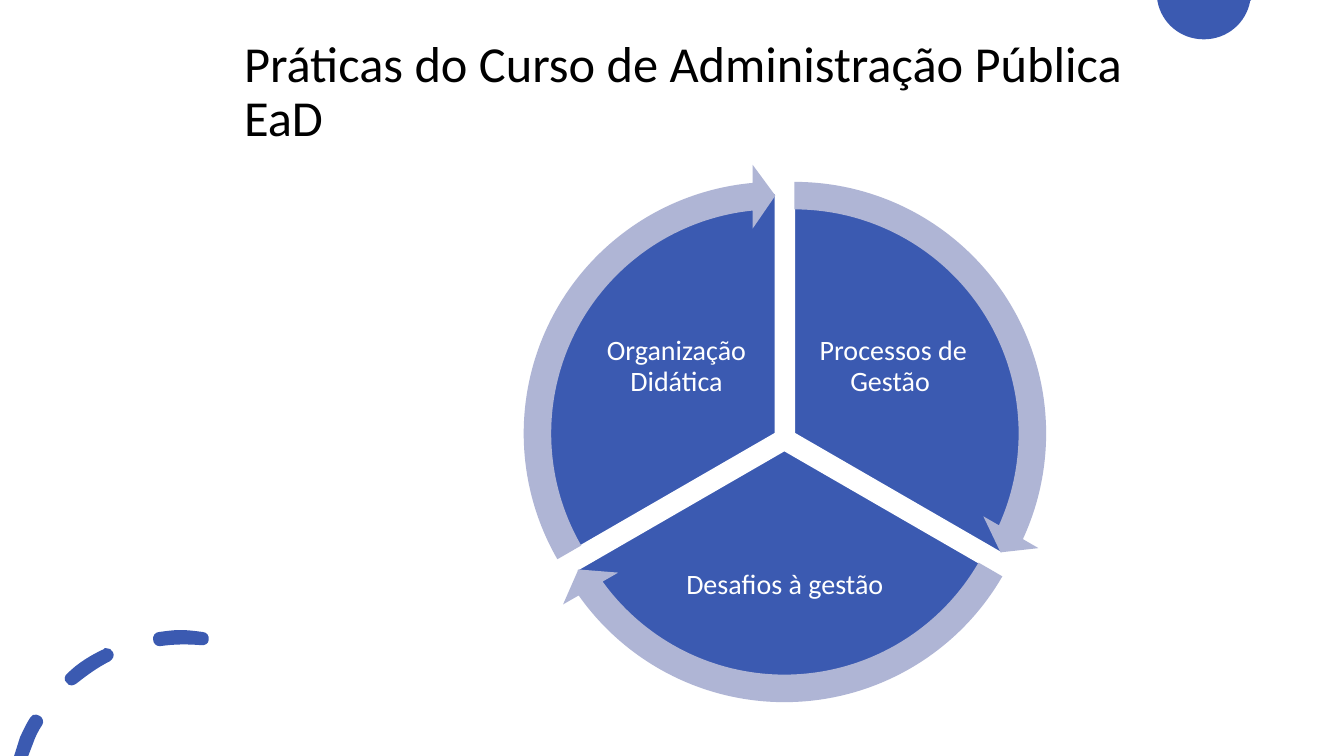
from dataclasses import dataclass

from lxml.etree import SubElement
from pptx import Presentation
from pptx.dml.color import RGBColor
from pptx.enum.shapes import MSO_SHAPE as Kind
from pptx.enum.text import MSO_ANCHOR as Anchor, MSO_AUTO_SIZE as Fit, PP_ALIGN as Align
from pptx.oxml.ns import qn
from pptx.shapes.autoshape import Shape
from pptx.shapes.shapetree import GroupShapes, SlideShapes
from pptx.slide import Slide
from pptx.text.text import TextFrame
from pptx.util import Inches, Pt

Point = tuple[float, float]
Part = tuple[Point, ...]
Outline = tuple[Part, ...]


@dataclass(frozen=True)
class Theme:
    font: str = "Calibri"
    blue: RGBColor = RGBColor(0x3B, 0x5A, 0xB1)
    pale: RGBColor = RGBColor(0xAF, 0xB5, 0xD5)
    white: RGBColor = RGBColor(0xFF, 0xFF, 0xFF)
    black: RGBColor = RGBColor(0, 0, 0)
    title: int = 36
    label: int = 20


@dataclass(frozen=True)
class Box:
    left: float
    top: float
    width: float
    height: float

    def emu(self) -> tuple[int, int, int, int]:
        return (Inches(self.left), Inches(self.top),
                Inches(self.width), Inches(self.height))


@dataclass(frozen=True)
class Sector:
    """One third of the cycle; angles are in the units of the preset shapes."""
    text: str
    mid: Point
    start: float
    end: float
    label: Box


THEME = Theme()
PIE, RING = 4.76, 5.35
BAND, HEAD, TIP = 0.051, 3.275, 0.059

SECTORS = (
    Sector("Processos de Gestão ", (7.88, 4.3), 162, 18, Box(8.01, 2.93, 1.7, 1.42)),
    Sector("Desafios à gestão ", (7.78, 4.47), 18, 90, Box(6.54, 5.18, 2.55, 1.25)),
    Sector("Organização Didática", (7.69, 4.3), 90, 162, Box(5.86, 2.93, 1.7, 1.42)),
)

# Each outline is a start point, then lines (one point) or Bezier curves (three).
DISC: Outline = (
    ((11.48, 0),), ((12.41, 0),), ((12.4, 0.01),),
    ((12.36, 0.23), (12.17, 0.39), (11.94, 0.39)),
    ((11.71, 0.39), (11.52, 0.23), (11.48, 0.01)),
)
LOW: Outline = (
    ((0.36, 7.09),), ((0.34, 7.08), (0.31, 7.1), (0.3, 7.12)),
    ((0.26, 7.18), (0.23, 7.25), (0.2, 7.31)),
    ((0.14, 7.5),), ((0.28, 7.5),), ((0.33, 7.37),),
    ((0.35, 7.31), (0.38, 7.25), (0.42, 7.19)),
    ((0.44, 7.16), (0.42, 7.11), (0.39, 7.1)),
    ((0.38, 7.09), (0.37, 7.09), (0.36, 7.09)),
)
MIDDLE: Outline = (
    ((1.05, 6.43),), ((1.04, 6.43), (1.03, 6.43), (1.03, 6.44)),
    ((0.9, 6.5), (0.77, 6.58), (0.67, 6.68)),
    ((0.64, 6.7), (0.63, 6.75), (0.66, 6.77)),
    ((0.67, 6.79), (0.69, 6.8), (0.71, 6.8)), ((0.71, 6.8),),
    ((0.73, 6.8), (0.74, 6.79), (0.76, 6.78)),
    ((0.86, 6.7), (0.97, 6.62), (1.09, 6.56)),
    ((1.12, 6.54), (1.14, 6.5), (1.12, 6.47)),
    ((1.11, 6.44), (1.08, 6.43), (1.05, 6.43)),
)
HIGH: Outline = (
    ((1.79, 6.25),), ((1.72, 6.25), (1.65, 6.26), (1.58, 6.27)),
    ((1.54, 6.27), (1.51, 6.31), (1.52, 6.35)),
    ((1.52, 6.38), (1.55, 6.41), (1.58, 6.41)),
    ((1.59, 6.41), (1.59, 6.41), (1.59, 6.41)),
    ((1.73, 6.39), (1.86, 6.39), (1.99, 6.4)),
    ((2.03, 6.41), (2.07, 6.38), (2.07, 6.35)),
    ((2.08, 6.31), (2.05, 6.27), (2.01, 6.27)),
    ((2.01, 6.27), (2.01, 6.27), (2.01, 6.27)),
    ((1.94, 6.26), (1.86, 6.25), (1.79, 6.25)),
)


def paint(shape: Shape, color: RGBColor) -> None:
    shape.shadow.inherit = False
    shape.fill.solid()
    shape.fill.fore_color.rgb = color
    shape.line.fill.background()


def bend(shape: Shape, parts: list[Part]) -> None:
    """Turn the line segments that have control points into Bezier curves."""
    lines = list(shape.element.iter(qn("a:lnTo")))
    for line, part in zip(lines, parts):
        if len(part) == 3:
            curve = line.makeelement(qn("a:cubicBezTo"))
            for x, y in part:
                SubElement(curve, qn("a:pt"), x=str(Inches(x) - shape.left),
                           y=str(Inches(y) - shape.top))
            line.getparent().replace(line, curve)


def add_blob(shapes: SlideShapes, *outlines: Outline) -> None:
    """Draw one freeform with a closed contour for each outline."""
    pen = None
    for outline in outlines:
        first, *ends = [(Inches(x), Inches(y)) for *_, (x, y) in outline]
        if pen is None:
            pen = shapes.build_freeform(*first, scale=1.0)
        else:
            pen.move_to(*first)
        pen.add_line_segments(ends, close=True)
    blob = pen.convert_to_shape()
    bend(blob, [part for outline in outlines for part in outline[1:]])
    paint(blob, THEME.blue)


def write(frame: TextFrame, text: str, size: int, color: RGBColor, align: Align) -> None:
    frame.text = text
    frame.word_wrap = True
    frame.auto_size = Fit.NONE
    frame.vertical_anchor = Anchor.MIDDLE
    para = frame.paragraphs[0]
    para.alignment = align
    para.line_spacing = 0.9
    font = para.runs[0].font
    font.name, font.size = THEME.font, Pt(size)
    font.color.rgb = color


def add_round(shapes: GroupShapes, kind: Kind, mid: Point, size: float,
              color: RGBColor, *values: float) -> Shape:
    """Draw a circular preset around its middle with the given adjustments."""
    box = Box(mid[0] - size / 2, mid[1] - size / 2, size, size)
    shape = shapes.add_shape(kind, *box.emu())
    for index, value in enumerate(values):
        shape.adjustments[index] = value
    paint(shape, color)
    return shape


def add_sector(shapes: GroupShapes, sector: Sector) -> None:
    pie = add_round(shapes, Kind.PIE, sector.mid, PIE, THEME.blue,
                    sector.start, sector.end)
    pie.line.color.rgb = THEME.white
    pie.line.width = Pt(1)
    frame = shapes.add_textbox(*sector.label.emu()).text_frame
    frame.margin_left = frame.margin_right = Inches(0.03)
    frame.margin_top = frame.margin_bottom = Inches(0.03)
    write(frame, sector.text, THEME.label, THEME.white, Align.CENTER)


def add_arrow(shapes: GroupShapes, sector: Sector) -> None:
    add_round(shapes, Kind.CIRCULAR_ARROW, sector.mid, RING, THEME.pale,
              BAND, HEAD, sector.end - HEAD, sector.start, TIP)


def add_title(slide: Slide) -> None:
    title = slide.shapes.title
    title.left, title.top, title.width, title.height = Box(2.32, 0.3, 9, 1.25).emu()
    write(title.text_frame, "Práticas do Curso de Administração Pública EaD",
          THEME.title, THEME.black, Align.LEFT)


def main() -> None:
    deck = Presentation()
    deck.slide_width, deck.slide_height = Inches(13.33), Inches(7.5)
    slide = deck.slides.add_slide(deck.slide_layouts[5])
    add_blob(slide.shapes, DISC)
    add_blob(slide.shapes, LOW, MIDDLE, HIGH)
    add_title(slide)
    cycle = slide.shapes.add_group_shape().shapes
    for sector in SECTORS:
        add_sector(cycle, sector)
    for sector in SECTORS:
        add_arrow(cycle, sector)
    deck.save("out.pptx")


if __name__ == "__main__":
    main()
